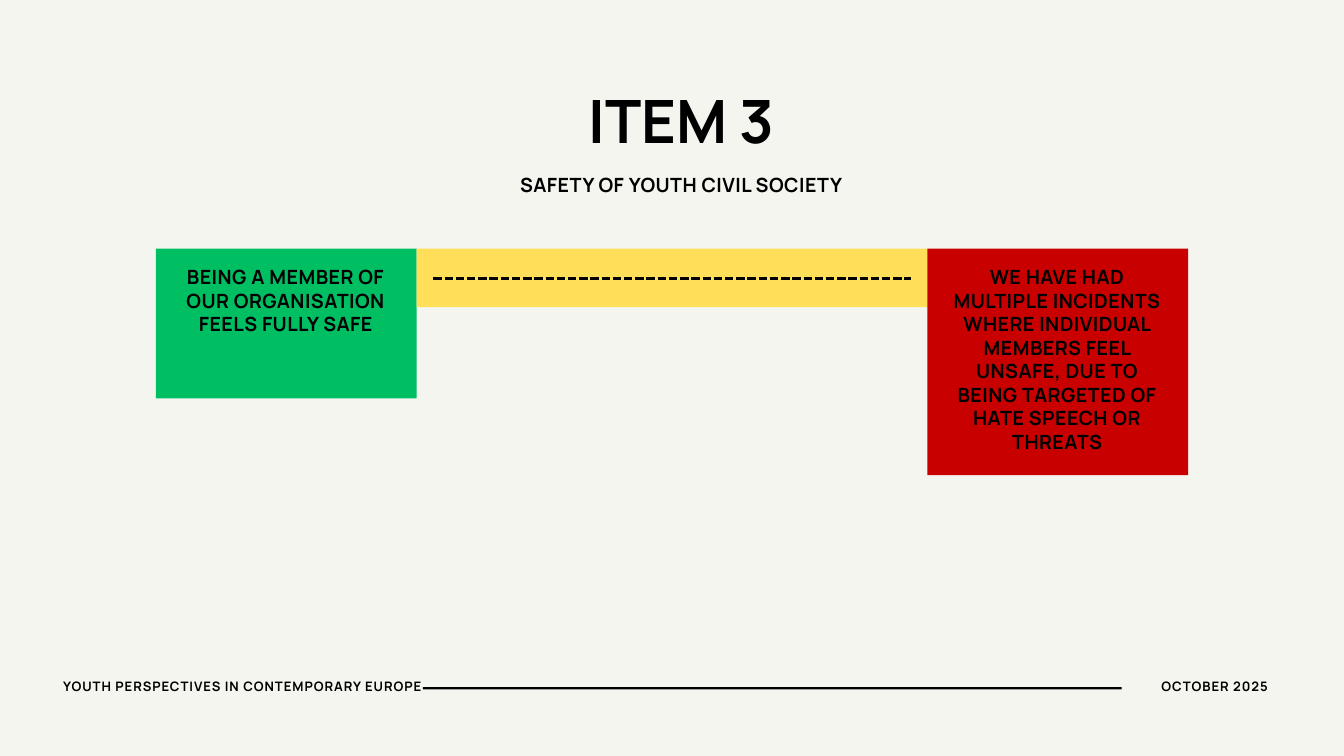
from dataclasses import dataclass

from lxml.etree import SubElement
from pptx import Presentation
from pptx.dml.color import RGBColor
from pptx.enum.dml import MSO_LINE
from pptx.enum.shapes import MSO_CONNECTOR, MSO_SHAPE
from pptx.enum.text import MSO_ANCHOR, MSO_AUTO_SIZE, PP_ALIGN
from pptx.oxml.ns import qn
from pptx.util import Cm, Pt


@dataclass(frozen=True)
class Theme:
    font: str = "Manrope"
    paper: str = "F5F5EF"
    ink: str = "000000"
    safe: str = "00BF63"
    between: str = "FFDE59"
    unsafe: str = "C90000"
    title: int = 64
    body: int = 21
    footer: int = 14
    leading: float = 1.2


THEME = Theme()

# Scale geometry in cm: two end panels joined by a band
SCALE_LEFT, SCALE_TOP = 5.89, 9.4
PANEL_WIDTH, BAND_WIDTH, BAND_HEIGHT = 9.86, 19.3, 2.21
BAND_LEFT = SCALE_LEFT + PANEL_WIDTH
BAND_RIGHT = BAND_LEFT + BAND_WIDTH
PADDING, TEXT_TOP, TEXT_WIDTH = 0.76, 10.03, 8.3
DASH_Y, DASH_GAP = 10.54, 0.63


def place(shape, left, top, width, height):
    shape.left, shape.top = Cm(left), Cm(top)
    shape.width, shape.height = Cm(width), Cm(height)


def write(shape, text, size, align=PP_ALIGN.CENTER, spacing=0):
    """Fill a text shape with one bold paragraph; spacing is in points."""
    frame = shape.text_frame
    frame.text = text
    frame.word_wrap = True
    frame.auto_size = MSO_AUTO_SIZE.NONE
    frame.vertical_anchor = MSO_ANCHOR.TOP
    frame.margin_left = frame.margin_right = 0
    frame.margin_top = frame.margin_bottom = 0
    para = frame.paragraphs[0]
    para.alignment = align
    para.line_spacing = Pt(size * THEME.leading)
    span = para.runs[0]
    span.font.name = THEME.font
    span.font.size = Pt(size)
    span.font.bold = True
    span.font.color.rgb = RGBColor.from_string(THEME.ink)
    if spacing:
        span.font._element.set("spc", str(int(spacing * 100)))


def add_title(page, text, *area):
    title = page.shapes.title
    place(title, *area)
    write(title, text, THEME.title)


def add_text(page, text, size, area, align=PP_ALIGN.CENTER, spacing=0.5):
    box = page.shapes.add_textbox(*map(Cm, area))
    write(box, text, size, align, spacing)


def add_block(page, color, *area):
    block = page.shapes.add_shape(MSO_SHAPE.RECTANGLE, *map(Cm, area))
    block.shadow.inherit = False
    block.fill.solid()
    block.fill.fore_color.rgb = RGBColor.from_string(color)
    block.line.fill.background()


def add_panel(page, color, text, left, height):
    add_block(page, color, left, SCALE_TOP, PANEL_WIDTH, height)
    text_height = SCALE_TOP + height - TEXT_TOP
    add_text(page, text, THEME.body,
             (left + PADDING, TEXT_TOP, TEXT_WIDTH, text_height))


def add_dashes(page, start, end, y):
    dashes = page.shapes.add_connector(
        MSO_CONNECTOR.STRAIGHT, Cm(start), Cm(y), Cm(end), Cm(y))
    dashes.line.color.rgb = RGBColor.from_string(THEME.ink)
    dashes.line.width = Pt(3)
    dashes.line.dash_style = MSO_LINE.SQUARE_DOT
    SubElement(dashes._element.spPr, qn("a:effectLst"))


def main():
    deck = Presentation()
    deck.slide_width, deck.slide_height = Cm(50.8), Cm(28.58)
    page = deck.slides.add_slide(deck.slide_layouts[5])
    page.background.fill.solid()
    page.background.fill.fore_color.rgb = RGBColor.from_string(THEME.paper)

    # Heading
    add_title(page, "ITEM 3", 6.2, 3.15, 39.12, 2.77)
    add_text(page, "SAFETY OF YOUTH CIVIL SOCIETY", THEME.body,
             (15.16, 6.53, 21.18, 0.91))

    # Scale from safe to unsafe
    add_panel(page, THEME.safe,
              "BEING A MEMBER OF OUR ORGANISATION FEELS FULLY SAFE",
              SCALE_LEFT, 5.66)
    add_block(page, THEME.between,
              BAND_LEFT, SCALE_TOP, BAND_WIDTH, BAND_HEIGHT)
    add_panel(page, THEME.unsafe,
              "WE HAVE HAD MULTIPLE INCIDENTS WHERE INDIVIDUAL MEMBERS FEEL "
              "UNSAFE, DUE TO BEING TARGETED OF HATE SPEECH OR THREATS",
              BAND_RIGHT, 8.56)
    add_dashes(page, BAND_LEFT + DASH_GAP, BAND_RIGHT - DASH_GAP, DASH_Y)

    # Footer
    add_block(page, THEME.ink, 15.98, 25.98, 26.42, 0.08)
    add_text(page, "OCTOBER 2025", THEME.footer,
             (42.7, 25.66, 5.23, 0.64), PP_ALIGN.RIGHT, 1)
    add_text(page, "YOUTH PERSPECTIVES IN CONTEMPORARY EUROPE", THEME.footer,
             (2.39, 25.66, 13.67, 0.64), PP_ALIGN.LEFT, 1)

    deck.save("out.pptx")


if __name__ == "__main__":
    main()
